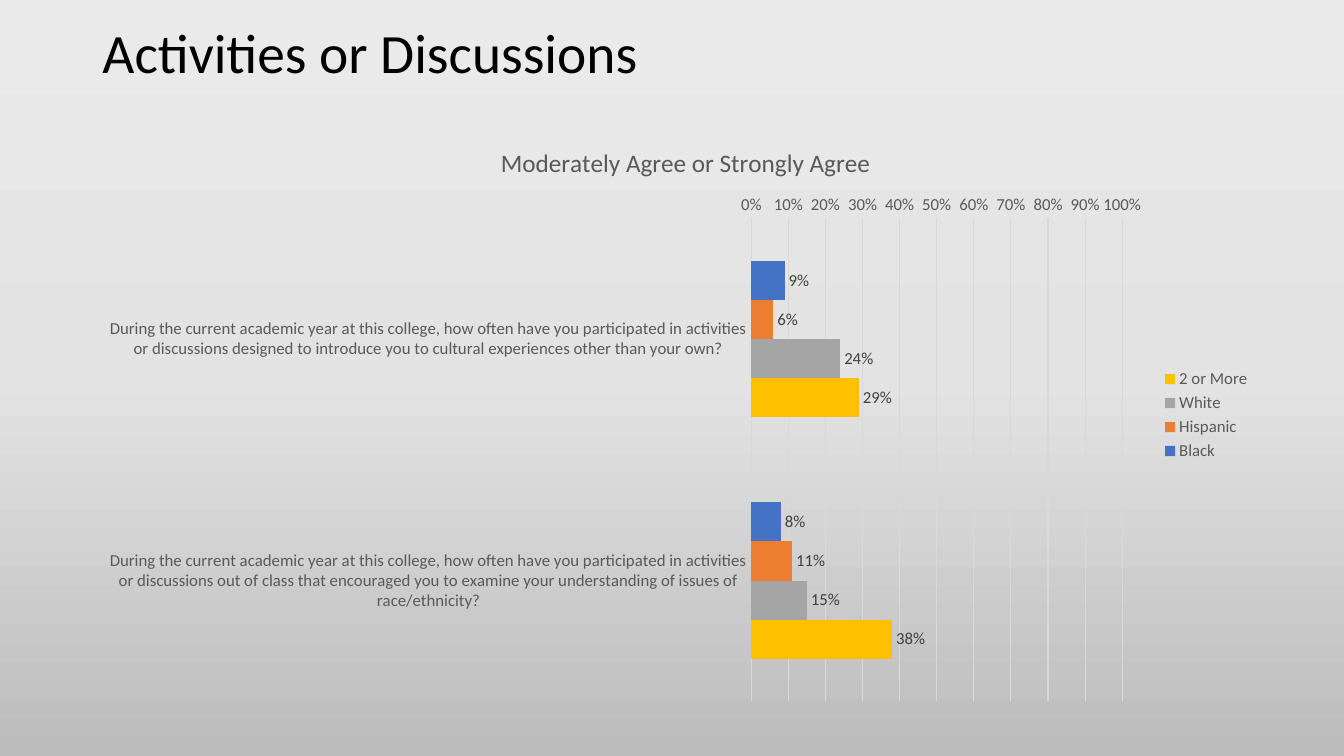
import copy

import pptx
import pptx.chart.data
import pptx.dml.color
import pptx.enum.chart
import pptx.enum.text
import pptx.oxml
import pptx.oxml.ns
import pptx.util

Pt = pptx.util.Pt
FONT = "Calibri"
QUESTION = ("During the current academic year at this college, how often have you "
            "participated in activities or discussions ")
QUESTIONS = [
    QUESTION + "designed to introduce you to cultural experiences other than your own?",
    QUESTION + "out of class that encouraged you to examine your understanding "
               "of issues of race/ethnicity?",
]
GROUPS = [
    ("Black", (0.09, 0.08), "4472C4"),
    ("Hispanic", (0.06, 0.11), "ED7D31"),
    ("White", (0.24, 0.15), "A5A5A5"),
    ("2 or More", (0.29, 0.38), "FFC000"),
]


def color(value):
    return pptx.dml.color.RGBColor.from_string(value)


def style_font(font, size, value):
    font.name = FONT
    font.size = Pt(size)
    font.bold = False
    font.color.rgb = color(value)


def style_line(line, value):
    line.color.rgb = color(value)
    line.width = Pt(0.75)


def set_layout(parent, before, **fractions):
    """Place a chart part by fractions of the chart's size."""
    for old in parent.findall(pptx.oxml.ns.qn("c:layout")):
        parent.remove(old)
    target = '<c:layoutTarget val="inner"/>' if "w" in fractions else ""
    modes = "".join(f'<c:{name}Mode val="edge"/>' for name in "xy")
    sizes = "".join(f'<c:{name} val="{value}"/>' for name, value in fractions.items())
    layout = pptx.oxml.parse_xml(
        f'<c:layout {pptx.oxml.ns.nsdecls("c")}><c:manualLayout>'
        f"{target}{modes}{sizes}</c:manualLayout></c:layout>")
    parent.find(pptx.oxml.ns.qn(before)).addprevious(layout)


def paint_background(page):
    fill = page.background.fill
    fill.gradient()
    fill.gradient_angle = 270
    stop_list = page._element.xpath(".//a:gsLst")[0]
    stop_list.insert(1, copy.deepcopy(stop_list[0]))
    shades = [(0, "EBEAEA"), (0.5, "E4E3E3"), (1, "BDBCBC")]
    for stop, (position, value) in zip(fill.gradient_stops, shades):
        stop.position = position
        stop.color.rgb = color(value)


def add_title(page, left, top, width, height):
    title = page.shapes.title
    title.left, title.top, title.width, title.height = map(Pt, (left, top, width, height))
    frame = title.text_frame
    frame.vertical_anchor = pptx.enum.text.MSO_ANCHOR.MIDDLE
    frame.auto_size = pptx.enum.text.MSO_AUTO_SIZE.NONE
    para = frame.paragraphs[0]
    para.alignment = pptx.enum.text.PP_ALIGN.LEFT
    para.line_spacing = 0.9
    span = para.add_run()
    span.text = "Activities or Discussions"
    style_font(span.font, 39.6, "000000")


def add_agreement_chart(page, left, top, width, height):
    data = pptx.chart.data.CategoryChartData(number_format="0%")
    data.categories = QUESTIONS
    for name, values, _ in GROUPS:
        data.add_series(name, values)
    chart = page.shapes.add_chart(
        pptx.enum.chart.XL_CHART_TYPE.BAR_CLUSTERED,
        *map(Pt, (left, top, width, height)), data).chart
    style_font(chart.font, 10, "000000")

    # Chart title
    chart.has_title = True
    span = chart.chart_title.text_frame.paragraphs[0].add_run()
    span.text = "Moderately Agree or Strongly Agree"
    style_font(span.font, 18, "595959")
    set_layout(chart.chart_title._element, "c:overlay", x=0.34, y=0.04)

    # Bars and their labels
    plot = chart.plots[0]
    plot.gap_width = 219
    plot.overlap = 0
    plot.vary_by_categories = False
    for series, (_, _, value) in zip(plot.series, GROUPS):
        series.format.fill.solid()
        series.format.fill.fore_color.rgb = color(value)
        labels = series.data_labels
        labels.show_value = True
        labels.number_format = "0%"
        labels.number_format_is_linked = False
        labels.position = pptx.enum.chart.XL_LABEL_POSITION.OUTSIDE_END
        style_font(labels.font, 12, "404040")

    # Axes
    for axis in (chart.category_axis, chart.value_axis):
        axis.major_tick_mark = pptx.enum.chart.XL_TICK_MARK.NONE
        axis.minor_tick_mark = pptx.enum.chart.XL_TICK_MARK.NONE
        style_font(axis.tick_labels.font, 12, "595959")
    chart.category_axis.reverse_order = True
    style_line(chart.category_axis.format.line, "D9D9D9")
    percent = chart.value_axis
    percent.minimum_scale, percent.maximum_scale, percent.major_unit = 0, 1, 0.1
    percent.tick_labels.number_format = "0%"
    percent.tick_labels.number_format_is_linked = False
    percent.format.line.fill.background()
    percent.has_major_gridlines = True
    style_line(percent.major_gridlines.format.line, "D9D9D9")
    set_layout(plot._element.getparent(), "c:barChart", x=0.56, y=0.17, w=0.32, h=0.81)

    # Legend
    chart.has_legend = True
    chart.legend.position = pptx.enum.chart.XL_LEGEND_POSITION.RIGHT
    chart.legend.include_in_layout = False
    style_font(chart.legend.font, 12, "595959")


def main():
    deck = pptx.Presentation()
    deck.slide_width, deck.slide_height = Pt(960), Pt(540)
    page = deck.slides.add_slide(deck.slide_layouts[5])
    paint_background(page)
    add_title(page, 66, 16, 828, 48)
    add_agreement_chart(page, 73, 83.5, 828, 426)
    deck.save("out.pptx")


if __name__ == "__main__":
    main()
